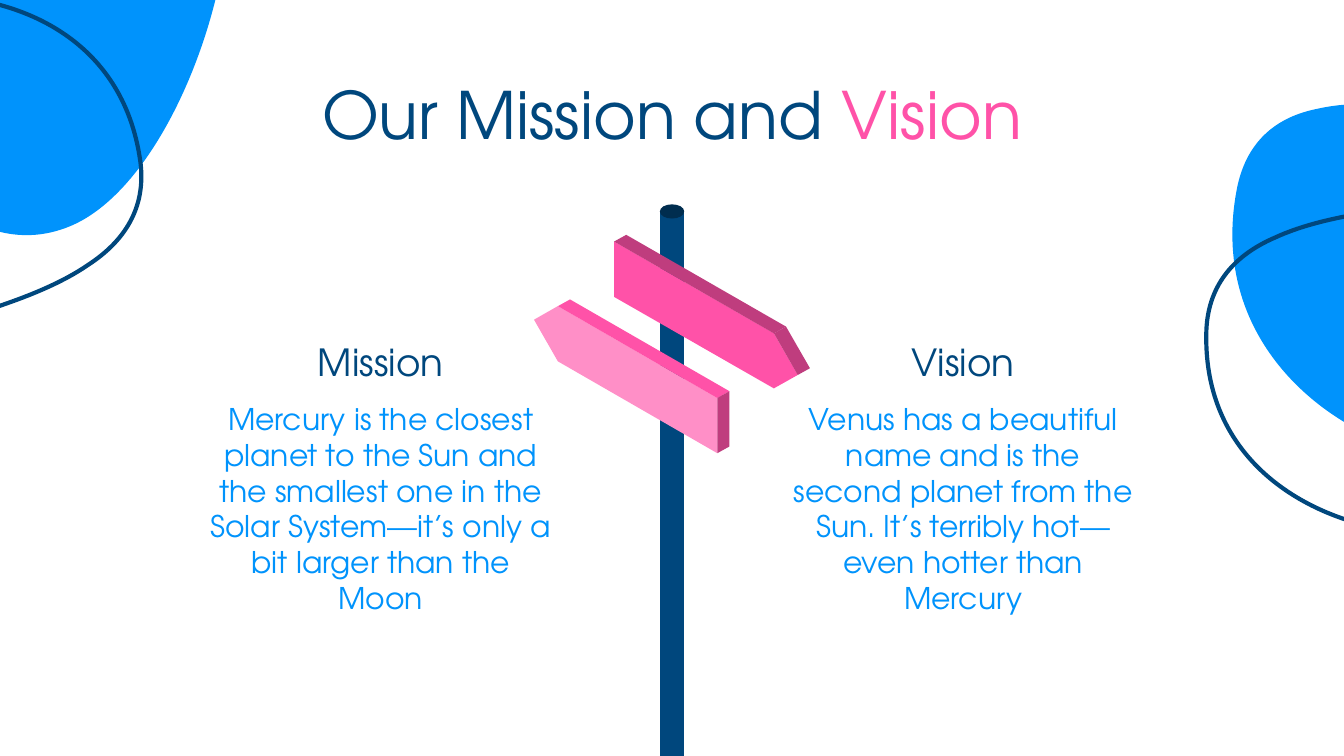
import lxml.etree
import pptx
import pptx.dml.color
import pptx.enum.text
import pptx.oxml.ns
import pptx.util

Pt = pptx.util.Pt
ANCHOR = pptx.enum.text.MSO_ANCHOR

COLOURS = {
    "navy": "00477D",
    "dark": "002D4F",
    "blue": "0093FC",
    "pink": "FF52A8",
    "light pink": "FF8FC7",
    "deep pink": "BF3D7E",
}

BLOB = [
    (75, 0), (74.2, 0.1), (73.4, 0.2), (72.7, 0.7),
    (62.9, 5.4), (59.3, 24.5), (45.5, 24.6),
    (43.7, 24.5), (41.9, 24.1), (39.8, 23.5),
    (31.6, 20.8), (21.1, 9.3), (13.8, 9.5),
    (10.5, 9.4), (7.7, 11.9), (6.1, 18.6),
    (0, 44.9), (12.6, 65.3), (20, 66.9),
    (20.5, 67.1), (20.9, 67), (21.4, 67),
    (27.5, 67), (39.3, 59.3), (47.4, 59.2),
    (49.4, 59.2), (51.2, 59.7), (52.7, 60.9),
    (65.8, 72.7), (66.5, 100), (76.7, 100),
    (86.6, 100), (100, 67.1), (99.7, 50.3),
    (99.5, 34.5), (86.1, 0), (75, 0),
]
BLOB_FILL_SIZE = (656.6, 347.8)
BLOB_LINE_SIZE = (697, 327.6)

CIRCLE = [
    (50, 0), (22, 0), (0, 22), (0, 50),
    (0, 78), (22, 100), (50, 100),
    (78, 100), (100, 78), (100, 50),
    (100, 22), (78, 0), (50, 0),
]


def colour(name):
    return pptx.dml.color.RGBColor.from_string(COLOURS[name])


def write_span(para, text, size=16, tint="blue", font="TeX Gyre Adventor"):
    span = para.add_run()
    span.text = text
    span.font.name = font
    span.font.size = Pt(size)
    span.font.color.rgb = colour(tint)


def shift(point, depth=(6.5, -3.6)):
    return point[0] + depth[0], point[1] + depth[1]


class Painter:
    def __init__(self, page):
        self.page = page

    def outline(self, points, fill=None, line=None):
        corners = [(Pt(x), Pt(y)) for x, y in points]
        builder = self.page.shapes.build_freeform(*corners[0], scale=1.0)
        builder.add_line_segments(corners[1:], close=True)
        shape = builder.convert_to_shape()
        shape.shadow.inherit = False
        if fill:
            shape.fill.solid()
            shape.fill.fore_color.rgb = colour(fill)
        else:
            shape.fill.background()
        if line:
            shape.line.color.rgb = colour(line)
            shape.line.width = Pt(2.25)
        else:
            shape.line.fill.background()
        return shape

    def curve(self, unit_points, left, top, size, rotation=0, **paint):
        width, height = size
        points = [(left + x * width / 100, top + y * height / 100)
                  for x, y in unit_points]
        shape = self.outline(points, **paint)
        qn = pptx.oxml.ns.qn
        steps = list(shape._element.iter(qn("a:lnTo")))
        for start in range(0, len(steps) - 2, 3):
            bezier = lxml.etree.Element(qn("a:cubicBezTo"))
            steps[start].addprevious(bezier)
            for step in steps[start:start + 3]:
                bezier.append(step[0])
                step.getparent().remove(step)
        shape.rotation = rotation

    def face(self, start, end, fill):
        self.outline([start, end, shift(end), shift(start)], fill=fill)

    def text(self, left, top, width, height, spans, anchor=ANCHOR.TOP):
        box = self.page.shapes.add_textbox(
            Pt(left), Pt(top), Pt(width), Pt(height))
        frame = box.text_frame
        frame.word_wrap = True
        frame.vertical_anchor = anchor
        frame.margin_left = frame.margin_right = Pt(7.2)
        frame.margin_top = frame.margin_bottom = Pt(7.2)
        para = frame.paragraphs[0]
        para.alignment = pptx.enum.text.PP_ALIGN.CENTER
        for words, style in spans:
            write_span(para, words, **style)

    def column(self, centre, heading, body):
        self.text(centre - 66.6, 170.6, 133.2, 42.5,
                  [(heading, {"size": 20, "tint": "navy"})], ANCHOR.BOTTOM)
        self.text(centre - 99.4, 207.4, 198.8, 141.8, [(body, {})])

    def signpost(self):
        self.outline([(353.5, 113.3), (366.5, 113.3),
                      (366.5, 590.4), (353.5, 590.4)], fill="navy")
        self.curve(CIRCLE, 353.5, 109.5, (13, 7.6), fill="dark")

        right_sign = [(329, 129.4), (329, 159.1), (414.6, 208.1),
                      (427.4, 200.9), (414.6, 178.6)]
        self.outline(right_sign, fill="pink")
        self.face(right_sign[0], right_sign[4], "deep pink")
        self.face(right_sign[4], right_sign[3], "deep pink")

        left_sign = [(298.9, 164), (286.1, 171.3), (298.9, 193.6),
                     (384.3, 242.8), (384.3, 213.2)]
        self.outline(left_sign, fill="light pink")
        self.face(left_sign[0], left_sign[4], "pink")
        self.face(left_sign[4], left_sign[3], "deep pink")


def main():
    deck = pptx.Presentation()
    deck.slide_width, deck.slide_height = Pt(720), Pt(405)
    painter = Painter(deck.slides.add_slide(deck.slide_layouts[6]))

    painter.curve(BLOB, -517.7, -154.1, BLOB_FILL_SIZE, 339.7, fill="blue")
    painter.curve(BLOB, -584.6, 8.6, BLOB_LINE_SIZE, 146.1, line="navy")
    painter.curve(BLOB, 639.4, -28.1, BLOB_FILL_SIZE, 347.8, fill="blue")
    painter.curve(BLOB, 619.2, -18, BLOB_LINE_SIZE, 336, line="navy")

    painter.text(90.7, 39.6, 538.6, 42.5, [
        ("Our Mission and ", {"size": 35, "tint": "navy"}),
        ("Vision", {"size": 35, "tint": "pink"}),
    ], ANCHOR.MIDDLE)
    painter.column(516, "Vision",
                   "Venus has a beautiful name and is the second planet from "
                   "the Sun. It’s terribly hot—even hotter than Mercury")
    painter.column(204, "Mission",
                   "Mercury is the closest planet to the Sun and the smallest "
                   "one in the Solar System—it’s only a bit larger than the "
                   "Moon")
    painter.signpost()
    deck.save("out.pptx")


if __name__ == "__main__":
    main()
